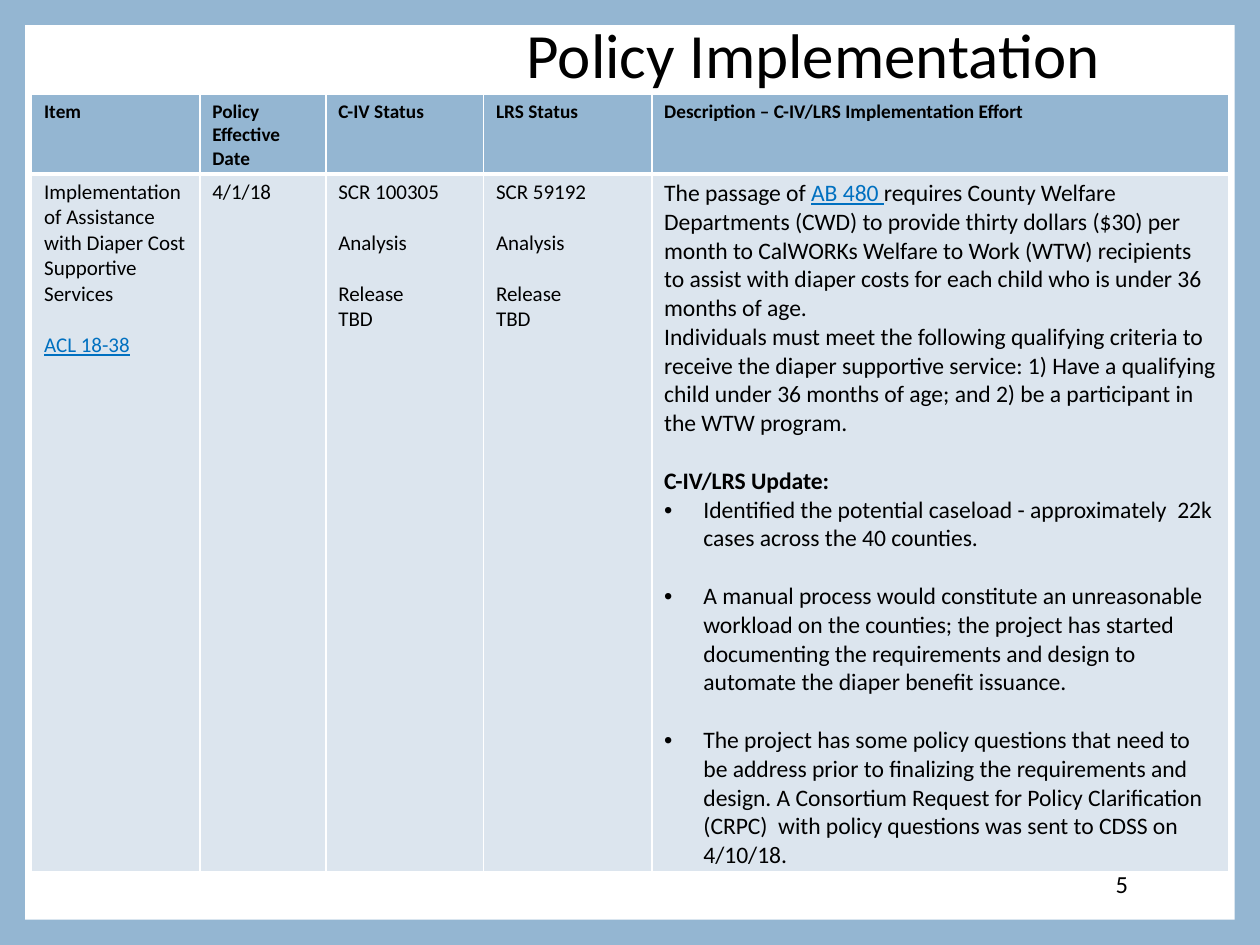
from lxml import etree
from pptx import Presentation
from pptx.dml.color import RGBColor
from pptx.enum.shapes import MSO_SHAPE
from pptx.enum.text import MSO_ANCHOR, MSO_AUTO_SIZE, PP_ALIGN
from pptx.oxml.ns import qn
from pptx.util import Cm, Pt

COLORS = {"frame": "94B6D2", "panel": "FFFFFF", "body": "DCE5EE",
          "text": "000000", "link": "0070C0"}
FONT = "Calibri"
LINE_HEIGHT = 1.22
LINKS = ("ACL 18-38", "AB 480 ")
HEADING = "C-IV/LRS Update:"

COLUMN_WIDTHS = (3.39, 2.54, 3.18, 3.39, 11.64)
ROW_HEIGHTS = (1.6, 14.07)
HEADERS = ("Item", "Policy Effective Date", "C-IV Status", "LRS Status",
           "Description – C-IV/LRS Implementation Effort")

# Each paragraph: (lines of space before, bulleted, text pieces)
STATUS_STEPS = [(1, False, ["Analysis"]), (1, False, ["Release"]), (0, False, ["TBD"])]
DETAILS = (
    [(0, False, ["Implementation of Assistance with Diaper Cost Supportive Services"]),
     (1, False, ["ACL 18-38"])],
    [(0, False, ["4/1/18"])],
    [(0, False, ["SCR 100305"])] + STATUS_STEPS,
    [(0, False, ["SCR 59192"])] + STATUS_STEPS,
    [(0, False, ["The passage of ", "AB 480 ",
                 "requires County Welfare Departments (CWD) to provide thirty dollars "
                 "($30) per month to CalWORKs Welfare to Work (WTW) recipients to assist "
                 "with diaper costs for each child who is under 36 months of age."]),
     (0, False, ["Individuals must meet the following qualifying criteria to receive the "
                 "diaper supportive service: 1) Have a qualifying child under 36 months "
                 "of age; and 2) be a participant in the WTW program."]),
     (1, False, [HEADING]),
     (0, True, ["Identified the potential caseload - approximately  22k cases across "
                "the 40 counties."]),
     (1, True, ["A manual process would constitute an unreasonable workload on the "
                "counties; the project has started documenting the requirements and "
                "design to automate the diaper benefit issuance."]),
     (1, True, ["The project has some policy questions that need to be address prior to "
                "finalizing the requirements and design. A Consortium Request for Policy "
                "Clarification (CRPC)  with policy questions was sent to CDSS on "
                "4/10/18."])],
)


def rgb(name):
    return RGBColor.from_string(COLORS[name])


def style_font(paragraph, size, bold=False):
    font = paragraph.font
    font.name, font.size, font.bold = FONT, Pt(size), bold
    font.color.rgb = rgb("text")


prs = Presentation()
prs.slide_width, prs.slide_height = Cm(25.4), Cm(19.05)
slide = prs.slides.add_slide(prs.slide_layouts[5])
slide.background.fill.solid()
slide.background.fill.fore_color.rgb = rgb("frame")

panel = slide.shapes.add_shape(MSO_SHAPE.RECTANGLE, Cm(0.51), Cm(0.51), Cm(24.38), Cm(18.03))
panel.shadow.inherit = False
panel.fill.solid()
panel.fill.fore_color.rgb = rgb("panel")
panel.line.fill.background()

title = slide.shapes.title
title.left, title.top, title.width, title.height = Cm(1.27), Cm(0.43), Cm(21.16), Cm(1.47)
title.text_frame.text = "Policy Implementation"
title.text_frame.auto_size = MSO_AUTO_SIZE.NONE
title.text_frame.vertical_anchor = MSO_ANCHOR.MIDDLE
heading = title.text_frame.paragraphs[0]
heading.alignment = PP_ALIGN.RIGHT
heading.line_spacing = 0.9
style_font(heading, 36)
# The panel was added after the title placeholder, so bring the title forward
panel._element.addnext(title._element)

page_box = slide.shapes.add_textbox(Cm(19.43), Cm(17.3), Cm(3.56), Cm(1.02)).text_frame
page_box.word_wrap = True
page_box.vertical_anchor = MSO_ANCHOR.MIDDLE
page_box.text = "5"
page_number = page_box.paragraphs[0]
page_number.alignment = PP_ALIGN.RIGHT
style_font(page_number, 14)

table = slide.shapes.add_table(2, len(HEADERS), Cm(0.64), Cm(1.91),
                               Cm(sum(COLUMN_WIDTHS)), Cm(sum(ROW_HEIGHTS))).table
for column, width in zip(table.columns, COLUMN_WIDTHS):
    column.width = Cm(width)
for row, height in zip(table.rows, ROW_HEIGHTS):
    row.height = Cm(height)

header_cells = [[(0, False, [header])] for header in HEADERS]
for row_index, contents in enumerate((header_cells, DETAILS)):
    is_header = row_index == 0
    for column_index, paragraphs in enumerate(contents):
        cell = table.cell(row_index, column_index)
        cell.margin_left = cell.margin_right = Cm(0.25)
        cell.margin_top = cell.margin_bottom = Cm(0.1)

        thick_side = "lnB" if is_header else "lnT"
        for side in ("lnL", "lnR", "lnT", "lnB"):
            border = etree.SubElement(cell._tc.get_or_add_tcPr(), qn(f"a:{side}"),
                                      w=str(Pt(3 if side == thick_side else 1)))
            border_fill = etree.SubElement(border, qn("a:solidFill"))
            etree.SubElement(border_fill, qn("a:srgbClr"), val=COLORS["panel"])
        cell.fill.solid()
        cell.fill.fore_color.rgb = rgb("frame" if is_header else "body")

        is_description = column_index == len(HEADERS) - 1
        size = 11 if is_header else 13.5 if is_description else 12
        for index, (lines_before, bulleted, pieces) in enumerate(paragraphs):
            frame = cell.text_frame
            paragraph = frame.paragraphs[0] if index == 0 else frame.add_paragraph()
            style_font(paragraph, size, bold=is_header or pieces == [HEADING])
            paragraph.space_before = Pt(round(lines_before * size * LINE_HEIGHT, 1))
            if bulleted:
                properties = paragraph._p.get_or_add_pPr()
                properties.set("marL", str(Cm(0.79)))
                properties.set("indent", str(-Cm(0.79)))
                bullet_font = etree.Element(qn("a:buFont"), typeface="Arial")
                bullet = etree.Element(qn("a:buChar"), char="•")
                properties.find(qn("a:defRPr")).addprevious(bullet_font)
                bullet_font.addnext(bullet)
            for piece in pieces:
                run = paragraph.add_run()
                run.text = piece
                if piece in LINKS:
                    run.font.color.rgb = rgb("link")
                    run.font.underline = True

prs.save("out.pptx")
